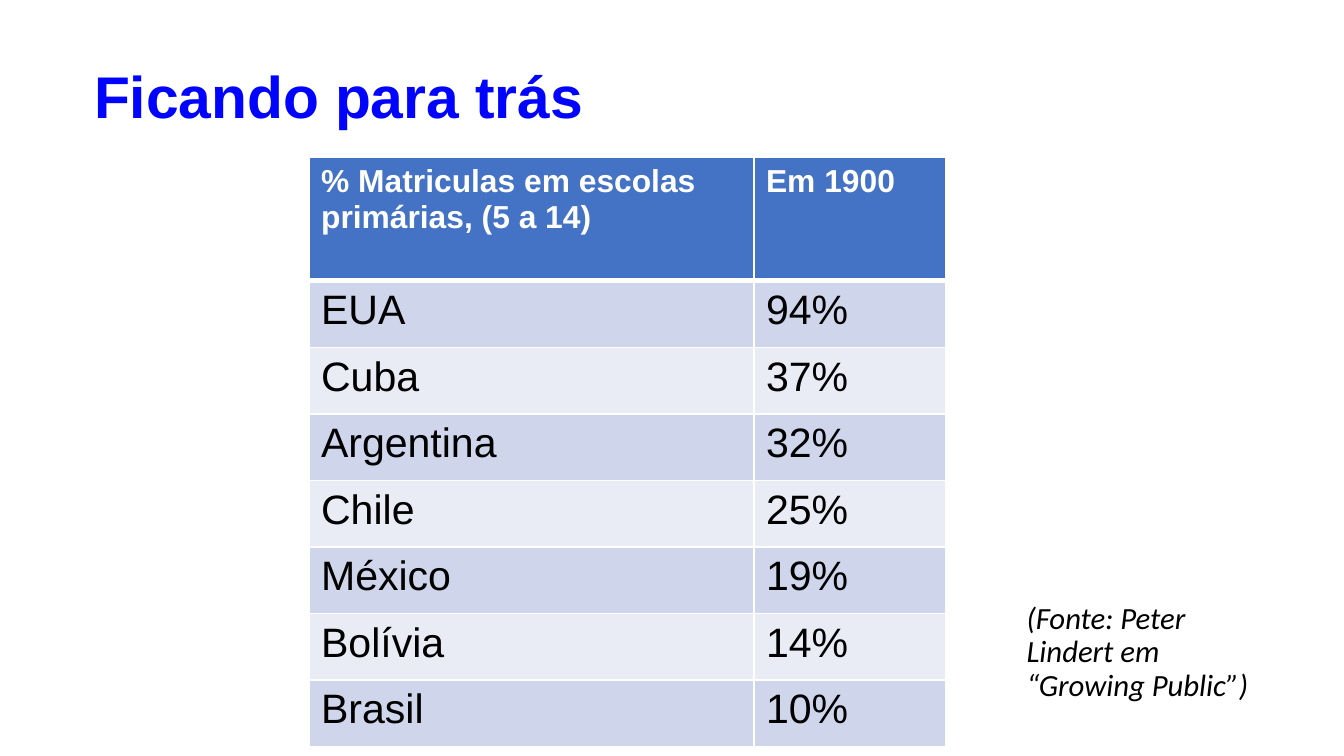
from dataclasses import dataclass

from lxml.etree import SubElement
from pptx import Presentation
from pptx.dml.color import RGBColor as Rgb
from pptx.enum.text import MSO_ANCHOR as Anchor
from pptx.oxml.ns import qn
from pptx.util import Emu, Pt

PX = 4572  # 200 px to the inch


@dataclass(frozen=True)
class Theme:
    title: str = "0003FE"
    text: str = "000000"
    white: str = "FFFFFF"
    header: str = "4472C4"
    bands: tuple = ("CFD5EA", "E9EBF5")
    title_size: float = 31.5
    header_size: float = 17
    body_size: float = 22
    source_size: float = 16.5


theme = Theme()


def px(*lengths):
    return [Emu(length * PX) for length in lengths]


def style(frame, font, size, color, bold=False, italic=False):
    for para in frame.paragraphs:
        for span in para.runs:
            span.font.name = font
            span.font.size = Pt(size)
            span.font.color.rgb = Rgb.from_string(color)
            span.font.bold = bold
            span.font.italic = italic


deck = Presentation()
deck.slide_width, deck.slide_height = px(2000, 1125)
page = deck.slides.add_slide(deck.slide_layouts[6])

# Source note, resting on the bottom of its column
source = page.shapes.add_textbox(*px(1508, 318, 392, 766)).text_frame
source.word_wrap = True
source.vertical_anchor = Anchor.BOTTOM
source.margin_bottom = px(38)[0]
source.text = "(Fonte: Peter Lindert em “Growing Public”)"
source.paragraphs[0].line_spacing = 0.9
style(source, "Calibri", theme.source_size, theme.text, italic=True)

# Enrolment table
rows = [
    ("% Matriculas em escolas primárias, (5 a 14)", "Em 1900"),
    ("EUA", "94%"),
    ("Cuba", "37%"),
    ("Argentina", "32%"),
    ("Chile", "25%"),
    ("México", "19%"),
    ("Bolívia", "14%"),
    ("Brasil", "10%"),
]
column_widths = px(662, 286)
row_heights = px(184, *[99] * (len(rows) - 1))
left, top = px(460, 234)
table = page.shapes.add_table(
    len(rows), 2, left, top, sum(column_widths), sum(row_heights)
).table
for column, width in zip(table.columns, column_widths):
    column.width = width

for r, values in enumerate(rows):
    table.rows[r].height = row_heights[r]
    is_header = r == 0
    fill = theme.header if is_header else theme.bands[(r - 1) % 2]
    for c, value in enumerate(values):
        cell = table.cell(r, c)
        cell.margin_left, cell.margin_right = px(18, 18)
        cell.text = value
        if is_header:
            style(cell.text_frame, "Arial", theme.header_size, theme.white, bold=True)
        else:
            style(cell.text_frame, "Arial", theme.body_size, theme.text)
        # Borders have to come before the fill in the cell properties
        properties = cell._tc.get_or_add_tcPr()
        for side in "LRTB":
            heavy = (r, side) in ((0, "B"), (1, "T"))
            line = SubElement(properties, qn(f"a:ln{side}"), w=str(Pt(3 if heavy else 1)))
            solid = SubElement(line, qn("a:solidFill"))
            SubElement(solid, qn("a:srgbClr"), val=theme.white)
        cell.fill.solid()
        cell.fill.fore_color.rgb = Rgb.from_string(fill)

# Title
title = page.shapes.add_textbox(*px(126, 106, 1580, 72)).text_frame
title.word_wrap = True
title.vertical_anchor = Anchor.MIDDLE
title.margin_left, title.margin_top, title.margin_right, title.margin_bottom = px(*[14] * 4)
title.text = "Ficando para trás"
style(title, "Arial", theme.title_size, theme.title, bold=True)

deck.save("out.pptx")
